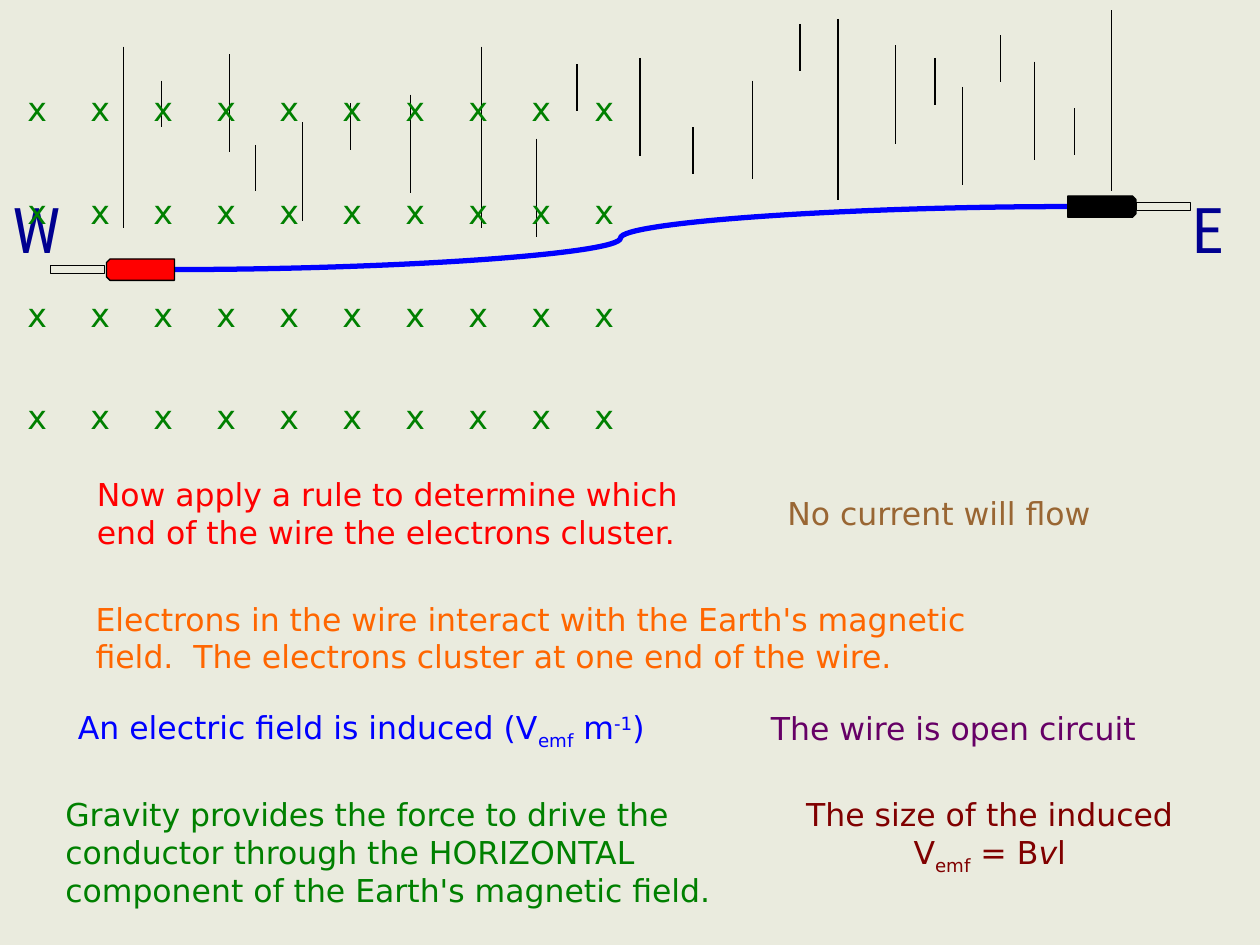
from dataclasses import dataclass
from pptx import Presentation
from pptx.util import Inches, Pt
from pptx.dml.color import RGBColor
from pptx.enum.shapes import MSO_CONNECTOR, MSO_SHAPE
from pptx.enum.text import MSO_AUTO_SIZE, PP_ALIGN
from pptx.oxml.ns import qn
from lxml.etree import SubElement


@dataclass(frozen=True)
class Theme:
    paper: str = "EAEBDE"
    black: str = "000000"
    red: str = "FF0000"
    blue: str = "0000FF"
    navy: str = "000090"
    green: str = "008000"
    maroon: str = "800000"
    brown: str = "996633"
    orange: str = "FF6600"
    purple: str = "660066"
    font: str = "DejaVu Sans"
    narrow: str = "Roboto Condensed"
    body: int = 18
    mark: int = 19
    compass: int = 36
    thin: float = 0.75
    thick: float = 3


def rgb(code):
    return RGBColor.from_string(code)


def write(para, text, *, font, size, color, base=0, italic=False):
    """Add one run; base is the sub- or superscript offset in percent."""
    run = para.add_run()
    run.text = text
    run.font.name = font
    run.font.size = Pt(size)
    run.font.color.rgb = rgb(color)
    if italic:
        run.font.italic = True
    if base:
        run.font._element.set("baseline", str(base * 1000))


class Board:
    def __init__(self, slide, theme):
        self.slide, self.theme = slide, theme
        fill = slide.background.fill
        fill.solid()
        fill.fore_color.rgb = rgb(theme.paper)

    def line(self, x1, y1, x2, y2, color, width, kind=MSO_CONNECTOR.STRAIGHT):
        ends = [Inches(v) for v in (x1, y1, x2, y2)]
        link = self.slide.shapes.add_connector(kind, *ends)
        link.line.color.rgb = rgb(color)
        link.line.width = Pt(width)
        SubElement(link._element.spPr, qn("a:effectLst"))

    def shape(self, kind, box, fill, turn=0):
        item = self.slide.shapes.add_shape(kind, *[Inches(v) for v in box])
        item.rotation = turn
        item.shadow.inherit = False
        item.fill.solid()
        item.fill.fore_color.rgb = rgb(fill)
        item.line.color.rgb = rgb(self.theme.black)
        item.line.width = Pt(self.theme.thin)

    def text(self, box, paras, color, *, size=None, font=None, align=None,
             after=0, left=0, wrap=True):
        """Each paragraph is a list of (text, format) pairs."""
        frame = self.slide.shapes.add_textbox(*[Inches(v) for v in box]).text_frame
        frame.word_wrap = wrap
        frame.auto_size = MSO_AUTO_SIZE.SHAPE_TO_FIT_TEXT
        for i, runs in enumerate(paras):
            para = frame.add_paragraph() if i else frame.paragraphs[0]
            para.alignment = align
            para.space_after = Pt(after)
            if left:
                para._p.get_or_add_pPr().set("marL", str(Inches(left)))
            for text, form in runs:
                write(para, text, font=font or self.theme.font,
                      size=size or self.theme.body, color=color, **form)


def plain(text):
    return [[(text, {})]]


# Motion lines: length, then the (left, top) of each
FALLS = {
    1.44: [(0.98, 0.37), (6.65, 0.15), (3.82, 0.37), (8.82, 0.08)],
    0.78: [(2.4, 0.97), (1.82, 0.43), (3.26, 0.75), (4.26, 1.1), (5.08, 0.46),
           (5.97, 0.64), (7.11, 0.36), (7.64, 0.69), (8.21, 0.49)],
    0.37: [(1.28, 0.64), (2.78, 0.82), (4.58, 0.51), (5.5, 1.01), (6.35, 0.19),
           (7.42, 0.46), (7.94, 0.28), (8.53, 0.86), (2.03, 1.15)],
}


def draw_wire(board):
    t = board.theme
    board.line(1.36, 2.14, 8.49, 1.64, t.blue, t.thick, MSO_CONNECTOR.CURVE)
    # Plug bodies and their pins
    plugs = [(1.03, 1.87, 270, t.red, 0.4, 2.11), (8.66, 1.37, 90, t.black, 9.02, 1.61)]
    for x, y, turn, fill, pin_x, pin_y in plugs:
        board.shape(MSO_SHAPE.SNIP_2_SAME_RECTANGLE, (x, y, 0.17, 0.54), fill, turn)
        board.shape(MSO_SHAPE.RECTANGLE, (pin_x, pin_y, 0.43, 0.06), t.paper)
    for size, spots in FALLS.items():
        for x, y in spots:
            board.line(x, y, x, y + size, t.black, t.thin)


def draw_field(board):
    t = board.theme
    # Compass ends
    for name, x, wide in (("W", 0, 0.57), ("E", 9.33, 0.51)):
        board.text((x, 1.46, wide, 0.65), plain(name), t.navy, size=t.compass,
                   font=t.narrow, align=PP_ALIGN.CENTER, wrap=False)
    # Field into the page: ten marks a row, one tab stop apart
    row = [("\t".join("x" * 10), {})]
    board.text((0.12, 0.65, 9.57, 2.89), [row] * 4, t.green, size=t.mark, after=36)


def draw_notes(board):
    t = board.theme
    sub, sup = {"base": -25}, {"base": 30}
    size = [("The size of the induced V", {}), ("emf", sub), (" = B", {}),
            ("v", {"italic": True}), ("l", {})]
    field = [("An electric field is induced (V", {}), ("emf", sub), (" m", {}),
             ("-1", sup), (")", {})]
    board.text((6.19, 6.26, 3.33, 0.71), [size], t.maroon,
               align=PP_ALIGN.CENTER, after=6)
    board.text((0.42, 6.26, 6.07, 1.01), plain(
        "Gravity provides the force to drive the conductor through the HORIZONTAL "
        "component of the Earth's magnetic field."), t.green, after=6)
    board.text((6.15, 3.87, 2.67, 0.4), plain("No current will flow"),
               t.brown, wrap=False)
    board.text((0.28, 3.72, 5.24, 0.71), plain(
        "Now apply a rule to determine which end of the wire the electrons cluster."),
        t.red, left=0.39)
    board.text((0.27, 4.71, 7.99, 0.71), plain(
        "Electrons in the wire interact with the Earth's magnetic field.  "
        "The electrons cluster at one end of the wire."), t.orange, left=0.39, after=6)
    board.text((0.52, 5.57, 4.85, 0.4), [field], t.blue, wrap=False)
    board.text((6.02, 5.58, 3.57, 0.4), plain("The wire is open circuit"),
               t.purple, after=6)


def main():
    deck = Presentation()
    deck.slide_width, deck.slide_height = Inches(10), Inches(7.5)
    board = Board(deck.slides.add_slide(deck.slide_layouts[6]), Theme())
    draw_wire(board)
    draw_field(board)
    draw_notes(board)
    deck.save("out.pptx")


if __name__ == "__main__":
    main()
